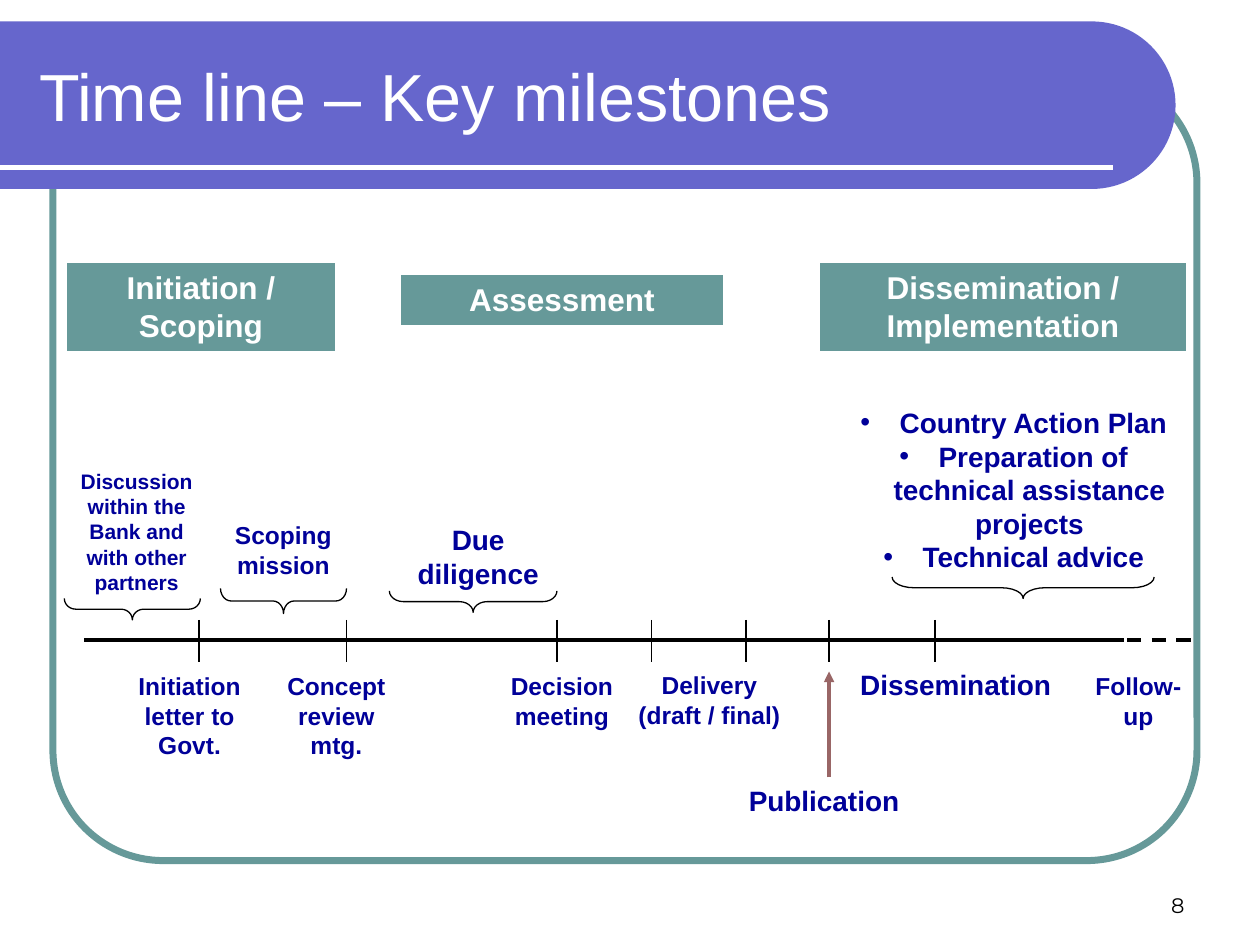
"""Build the key milestones time line slide."""
from lxml.etree import SubElement
from pptx import Presentation
from pptx.dml.color import RGBColor
from pptx.enum.dml import MSO_LINE
from pptx.enum.shapes import MSO_CONNECTOR, MSO_SHAPE
from pptx.enum.text import MSO_ANCHOR, MSO_AUTO_SIZE, PP_ALIGN
from pptx.oxml.ns import qn
from pptx.util import Inches, Pt

COLORS = {
    "banner": "6666CC",
    "teal": "669999",
    "navy": "000099",
    "arrow": "996666",
    "black": "000000",
    "white": "FFFFFF",
}
AXIS_TOP = 5.08
TICKS = [1.58, 2.75, 4.42, 5.17, 5.92, 6.58, 7.42]
PHASES = [
    ("Initiation / Scoping", 0.52, 2.08, 2.15, 0.72),
    ("Assessment", 3.17, 2.17, 2.58, 0.42),
    ("Dissemination / Implementation", 6.5, 2.08, 2.92, 0.72),
]
LABELS = [
    ("Discussion within the Bank and with other partners", 0.5, 3.67, 1.17, 1.1, 12),
    ("Scoping\nmission", 1.75, 4.08, 1, 0.57, 14),
    ("Due diligence", 3.17, 4.1, 1.25, 0.64, 16),
    ("Initiation letter to Govt.", 0.92, 5.28, 1.17, 0.8, 14),
    ("Concept review mtg.", 2.17, 5.28, 1, 0.8, 14),
    ("Decision meeting", 3.92, 5.28, 1.08, 0.57, 14),
    ("Delivery (draft / final)", 4.92, 5.27, 1.42, 0.57, 14),
    ("Dissemination", 6.67, 5.25, 1.83, 0.37, 16),
    ("Follow-up", 8.57, 5.28, 0.93, 0.57, 14),
    ("Publication", 5.83, 6.17, 1.42, 0.37, 16),
]
ACTIONS = " Country Action Plan\n Preparation of technical assistance projects\n Technical advice"
BRACES = [
    (0.51, 4.75, 1.08, 0.17),
    (1.75, 4.67, 1, 0.2),
    (3.09, 4.69, 1.33, 0.17),
    (7.08, 4.58, 2.08, 0.17),
]


def color(name):
    """Return the named colour."""
    return RGBColor.from_string(COLORS[name])


def write(shape, text, size=14, ink="navy", bold=True, font="Arial",
          align=PP_ALIGN.CENTER, anchor=MSO_ANCHOR.TOP, fit=MSO_AUTO_SIZE.SHAPE_TO_FIT_TEXT):
    """Fill a shape with one paragraph per line of text."""
    frame = shape.text_frame
    frame.text = text
    frame.word_wrap = True
    frame.auto_size = fit
    frame.vertical_anchor = anchor
    for para in frame.paragraphs:
        para.alignment = align
        for span in para.runs:
            span.font.name = font
            span.font.size = Pt(size)
            span.font.bold = bold
            span.font.color.rgb = color(ink)


def add_label(page, text, left, top, width, height, **style):
    """Add a formatted text box."""
    box = page.shapes.add_textbox(Inches(left), Inches(top), Inches(width), Inches(height))
    write(box, text, **style)
    return box


def add_bullets(box, indent=0.25):
    """Give each paragraph a hanging bullet."""
    for para in box.text_frame.paragraphs:
        properties = para._p.get_or_add_pPr()
        properties.set("marL", str(Inches(indent)))
        properties.set("indent", str(-Inches(indent)))
        SubElement(properties, qn("a:buFont"), typeface="Arial")
        SubElement(properties, qn("a:buChar"), char="•")


def add_line(page, start, end, ink="black", weight=0.75, dash=None, arrow=False):
    """Add a straight line, optionally dashed or with an arrowhead."""
    line = page.shapes.add_connector(MSO_CONNECTOR.STRAIGHT, *map(Inches, start + end))
    line.line.color.rgb = color(ink)
    line.line.width = Pt(weight)
    if dash:
        line.line.dash_style = dash
    if arrow:
        SubElement(line.line._get_or_add_ln(), qn("a:tailEnd"), type="triangle")
    SubElement(line._element.spPr, qn("a:effectLst"))


def add_shape(page, kind, left, top, width, height, fill=None, ink=None, weight=0.75):
    """Add a preset shape without shadow."""
    shape = page.shapes.add_shape(kind, *map(Inches, (left, top, width, height)))
    shape.shadow.inherit = False
    if fill:
        shape.fill.solid()
        shape.fill.fore_color.rgb = color(fill)
    else:
        shape.fill.background()
    if ink:
        shape.line.color.rgb = color(ink)
        shape.line.width = Pt(weight)
    else:
        shape.line.fill.background()
    return shape


def add_brace(page, left, top, span, depth):
    """Add a brace that opens upwards over the given span."""
    brace = add_shape(page, MSO_SHAPE.RIGHT_BRACE, left + (span - depth) / 2,
                      top - (span - depth) / 2, depth, span, ink="black")
    brace.rotation = 90
    brace.adjustments[0] = span / depth / 12


def add_frame(page):
    """Add the rounded outline and the title banner."""
    outline = add_shape(page, MSO_SHAPE.ROUNDED_RECTANGLE, 0.42, 0.58, 9.08, 6.25,
                        ink="teal", weight=4)
    outline.adjustments[0] = 0.14
    banner = add_shape(page, MSO_SHAPE.ROUND_2_SAME_RECTANGLE, 4, -3.83, 1.33, 9.33,
                       fill="banner")
    banner.left, banner.top = Inches(4), Inches(-3.83)
    banner.rotation = 90
    banner.adjustments[0] = 0.5
    add_line(page, (0, 1.33), (8.83, 1.33), ink="white", weight=3)


def add_title(page, text):
    """Place the title on top of the banner."""
    title = page.shapes.title
    title.left, title.top, title.width, title.height = map(Inches, (0.21, 0.25, 8.77, 1))
    write(title, text, size=38, ink="white", bold=False, align=PP_ALIGN.LEFT,
          anchor=MSO_ANCHOR.MIDDLE, fit=MSO_AUTO_SIZE.NONE)
    page.shapes._spTree.append(title._element)


def main():
    """Build and save the deck."""
    deck = Presentation()
    deck.slide_width, deck.slide_height = Inches(10), Inches(7.5)
    page = deck.slides.add_slide(deck.slide_layouts[5])
    add_frame(page)
    add_title(page, "Time line – Key milestones")
    add_label(page, "8", 7.17, 6.83, 2.33, 0.5, size=12, ink="black", bold=False,
              font="Montserrat", align=PP_ALIGN.RIGHT, anchor=MSO_ANCHOR.BOTTOM,
              fit=MSO_AUTO_SIZE.NONE)
    for text, *place in PHASES:
        phase = add_shape(page, MSO_SHAPE.RECTANGLE, *place, fill="teal", ink="white", weight=1.5)
        write(phase, text, size=18, ink="white")
    add_line(page, (0.67, AXIS_TOP), (8.92, AXIS_TOP), weight=2)
    add_line(page, (8.75, AXIS_TOP), (9.5, AXIS_TOP), weight=2, dash=MSO_LINE.DASH)
    for tick in TICKS:
        add_line(page, (tick, 4.92), (tick, 5.25))
    for text, *place, size in LABELS:
        add_label(page, text, *place, size=size)
    add_bullets(add_label(page, ACTIONS, 6.67, 3.17, 2.75, 1.44, size=16))
    for brace in BRACES:
        add_brace(page, *brace)
    add_line(page, (6.58, 6.17), (6.58, 5.33), ink="arrow", weight=2, arrow=True)
    deck.save("out.pptx")


if __name__ == "__main__":
    main()
